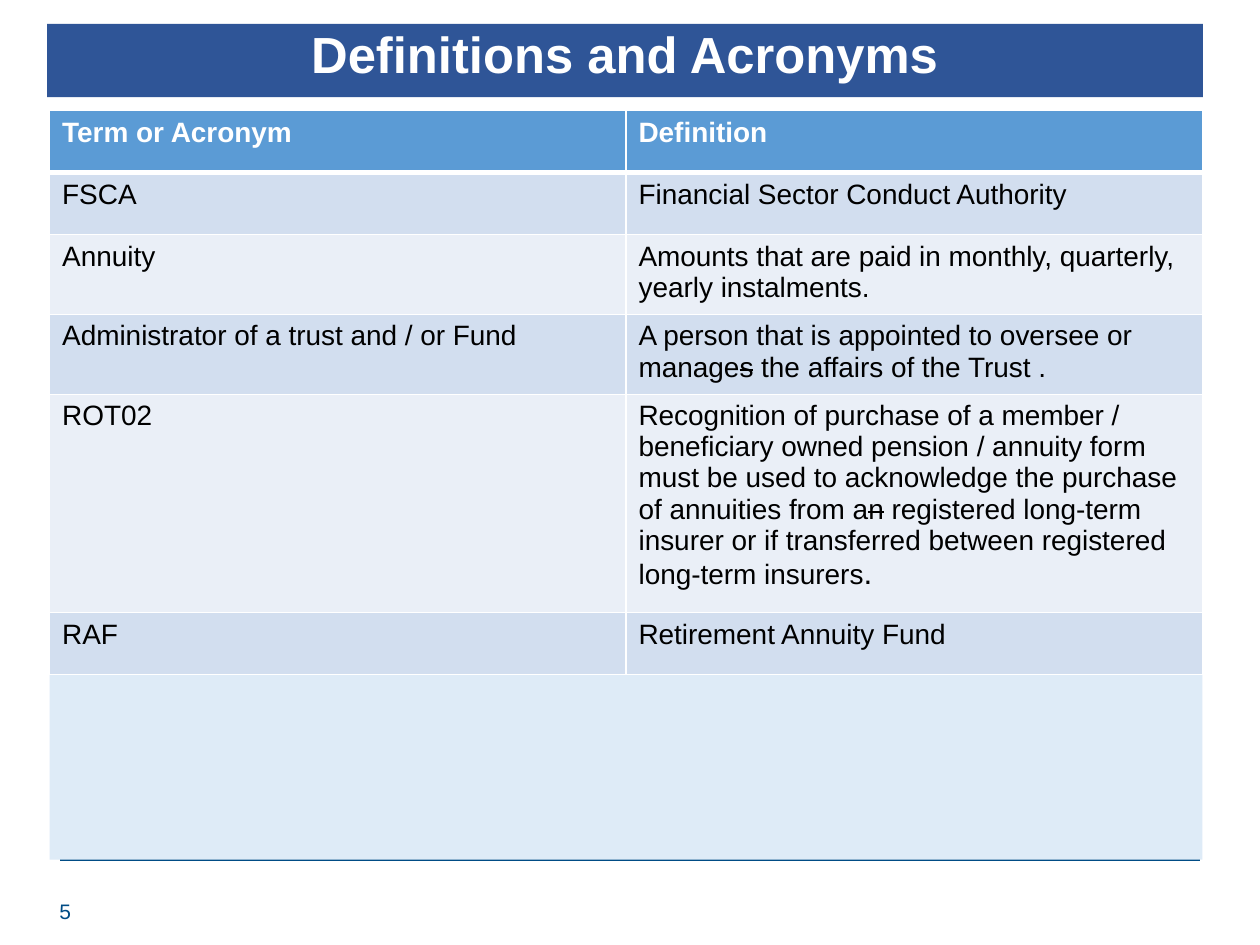
from lxml.etree import SubElement
from pptx import Presentation
from pptx.dml.color import RGBColor
from pptx.enum.shapes import MSO_CONNECTOR, MSO_SHAPE
from pptx.enum.text import MSO_ANCHOR, PP_ALIGN
from pptx.oxml import parse_xml
from pptx.oxml.ns import nsdecls, qn
from pptx.util import Cm, Pt


def color(value):
    return RGBColor.from_string(value)


def add_span(para, text, size, ink, bold=False):
    span = para.add_run()
    span.text = text
    formats = {"name": "Arial", "size": Pt(size), "bold": bold}
    for name, value in formats.items():
        setattr(span.font, name, value)
    span.font.color.rgb = color(ink)
    return span


deck = Presentation()
deck.slide_width, deck.slide_height = Cm(25.4), Cm(19.05)
page = deck.slides.add_slide(deck.slide_layouts[5])

title = page.shapes.title
title_place = {"left": Cm(0.95), "top": Cm(0.48), "width": Cm(23.3), "height": Cm(1.48)}
for name, value in title_place.items():
    setattr(title, name, value)
title.fill.solid()
title.fill.fore_color.rgb = color("2F5597")
title.text_frame.vertical_anchor = MSO_ANCHOR.TOP
para = title.text_frame.paragraphs[0]
para.alignment = PP_ALIGN.CENTER
para.line_spacing = 0.9
add_span(para, "Definitions and Acronyms", 29, "FFFFFF", True)

footer_line = page.shapes.add_connector(
    MSO_CONNECTOR.STRAIGHT, Cm(1.2), Cm(17.33), Cm(24.2), Cm(17.33)
)
footer_line.line.color.rgb = color("004C85")
footer_line.line.width = Pt(2)
SubElement(footer_line._element.spPr, qn("a:effectLst"))

number_box = page.shapes.add_textbox(Cm(0.95), Cm(17.86), Cm(1.17), Cm(1.02))
number_box.text_frame.word_wrap = True
number_box.text_frame.vertical_anchor = MSO_ANCHOR.MIDDLE
add_span(number_box.text_frame.paragraphs[0], "5", 12, "004C85")

panel = page.shapes.add_shape(MSO_SHAPE.RECTANGLE, Cm(1), Cm(3.18), Cm(23.24), Cm(14.15))
panel.shadow.inherit = False
panel.fill.solid()
panel.fill.fore_color.rgb = color("DEEBF7")
panel.line.fill.background()

rows = [
    ("Term or Acronym", ["Definition"]),
    ("FSCA", ["Financial Sector Conduct Authority"]),
    ("Annuity", ["Amounts that are paid in monthly, quarterly, yearly instalments."]),
    (
        "Administrator of a trust and / or Fund",
        ["A person that is appointed to oversee or manage", "s", " the affairs of the Trust ."],
    ),
    (
        "ROT02",
        [
            "Recognition of purchase of a member / beneficiary owned pension / annuity form "
            "must be used to acknowledge the purchase of annuities from a",
            "n",
            " registered long-term insurer or if transferred between registered long-term insurers",
            ".",
        ],
    ),
    ("RAF", ["Retirement Annuity Fund"]),
]
row_height = Cm(1.25)
table = page.shapes.add_table(
    len(rows), 2, Cm(1), Cm(2.23), Cm(23.24), row_height * len(rows)
).table

for row_index, (term, definition) in enumerate(rows):
    table.rows[row_index].height = row_height
    header = row_index == 0
    fill = "5B9BD5" if header else ("EAEFF7", "D2DEEF")[row_index % 2]
    ink = "FFFFFF" if header else "000000"
    for column_index, parts in enumerate(([term], definition)):
        cell = table.cell(row_index, column_index)
        cell.fill.solid()
        cell.fill.fore_color.rgb = color(fill)
        para = cell.text_frame.paragraphs[0]
        for part_index, text in enumerate(parts):
            span = add_span(para, text, 18 if part_index == 3 else 16, ink, header)
            if part_index == 1:
                span.font._element.set("strike", "sngStrike")
        widths = {"lnL": 1, "lnR": 1, "lnT": 3 if row_index == 1 else 1, "lnB": 3 if header else 1}
        for position, (side, width) in enumerate(widths.items()):
            border = parse_xml(
                f'<a:{side} {nsdecls("a")} w="{Pt(width)}"><a:solidFill>'
                f'<a:srgbClr val="FFFFFF"/></a:solidFill></a:{side}>'
            )
            cell._tc.get_or_add_tcPr().insert(position, border)

deck.save("out.pptx")
